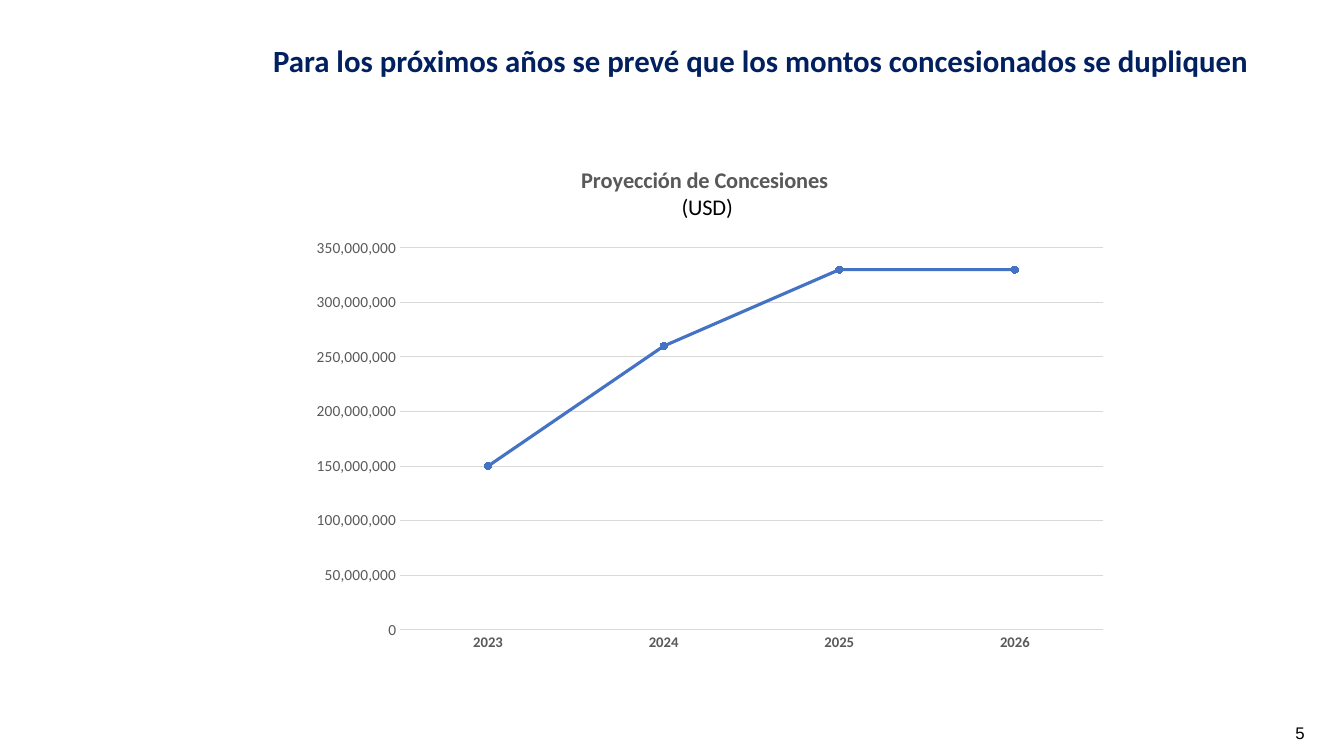
"""Build the slide on projected concessions, with its line chart."""
from dataclasses import dataclass

from lxml import etree
from pptx import Presentation
from pptx import util as u
from pptx.chart.data import CategoryChartData
from pptx.dml.color import RGBColor
from pptx.enum import chart as ch, text
from pptx.oxml import ns


@dataclass(frozen=True)
class TextStyle:
    size: float
    color: str
    bold: bool = False
    face: str = "Calibri"


@dataclass(frozen=True)
class Theme:
    headline: TextStyle = TextStyle(22, "002060", True)
    chart_title: TextStyle = TextStyle(16, "595959", True)
    chart_unit: TextStyle = TextStyle(16, "000000")
    years: TextStyle = TextStyle(10.5, "595959", True)
    amounts: TextStyle = TextStyle(11, "595959")
    page_number: TextStyle = TextStyle(12, "000000", face="Arial")
    series: str = "4472C4"
    grid: str = "D9D9D9"


@dataclass(frozen=True)
class Box:
    left: float
    top: float
    width: float
    height: float

    def emu(self) -> tuple:
        return tuple(map(u.Inches, (self.left, self.top, self.width, self.height)))


THEME = Theme()
PROJECTION = {"2023": 150_000_000, "2024": 260_000_000,
              "2025": 330_000_000, "2026": 330_000_000}
CHART = Box(2.97, 1.46, 8.13, 5.1)
PLOT = Box(3.97, 2.46, 6.97, 3.79)


def style_font(font, style: TextStyle) -> None:
    font.name = style.face
    font.size = u.Pt(style.size)
    font.bold = style.bold
    font.color.rgb = RGBColor.from_string(style.color)


def style_line(line, color: str, width: float) -> None:
    line.color.rgb = RGBColor.from_string(color)
    line.width = u.Pt(width)


def place_in_chart(element, index: int, **fractions: float) -> None:
    for old in element.findall(ns.qn("c:layout")):
        element.remove(old)
    layout = etree.Element(ns.qn("c:layout"))
    manual = etree.SubElement(layout, ns.qn("c:manualLayout"))
    modes = {"xMode": "edge", "yMode": "edge"}
    if "w" in fractions:
        modes = {"layoutTarget": "inner", **modes}
    for tag, value in {**modes, **fractions}.items():
        etree.SubElement(manual, ns.qn(f"c:{tag}")).set("val", str(value))
    element.insert(index, layout)


def add_headline(slide) -> None:
    headline = slide.shapes.title
    headline.left, headline.top, headline.width, headline.height = Box(2.68, 0.38, 10.65, 0.43).emu()
    frame = headline.text_frame
    frame.margin_left = frame.margin_right = u.Inches(0.03)
    frame.margin_top = frame.margin_bottom = u.Inches(0.03)
    frame.vertical_anchor = text.MSO_ANCHOR.TOP
    frame.auto_size = text.MSO_AUTO_SIZE.SHAPE_TO_FIT_TEXT
    frame.text = "Para los próximos años se prevé que los montos concesionados se dupliquen"
    frame.paragraphs[0].alignment = text.PP_ALIGN.LEFT
    style_font(frame.paragraphs[0].font, THEME.headline)


def add_page_number(slide) -> None:
    frame = slide.shapes.add_textbox(*Box(12.64, 7.12, 0.51, 0.21).emu()).text_frame
    frame.word_wrap = True
    frame.text = "5"
    frame.paragraphs[0].alignment = text.PP_ALIGN.CENTER
    style_font(frame.paragraphs[0].font, THEME.page_number)


def title_chart(chart) -> None:
    chart.has_title = True
    frame = chart.chart_title.text_frame
    frame.text = "Proyección de Concesiones "
    frame.add_paragraph().text = "(USD)"
    for paragraph, style in zip(frame.paragraphs, (THEME.chart_title, THEME.chart_unit)):
        style_font(paragraph.font, style)
    place_in_chart(chart.chart_title.element, 1, x=0.34, y=0.03)


def format_axes(chart) -> None:
    years, amounts = chart.category_axis, chart.value_axis
    for axis, style in ((years, THEME.years), (amounts, THEME.amounts)):
        axis.major_tick_mark = axis.minor_tick_mark = ch.XL_TICK_MARK.NONE
        style_font(axis.tick_labels.font, style)
    style_line(years.format.line, THEME.grid, 0.75)
    amounts.format.line.fill.background()
    amounts.minimum_scale, amounts.maximum_scale = 0, 350_000_000
    amounts.major_unit = 50_000_000
    amounts.tick_labels.number_format = "#,##0"
    amounts.tick_labels.number_format_is_linked = False
    style_line(amounts.major_gridlines.format.line, THEME.grid, 0.75)


def add_projection(slide) -> None:
    data = CategoryChartData(number_format="#,##0")
    data.categories = list(PROJECTION)
    data.add_series("Series 1", list(PROJECTION.values()))
    chart = slide.shapes.add_chart(ch.XL_CHART_TYPE.LINE_MARKERS, *CHART.emu(), data).chart
    chart.has_legend = False
    chart.font.name = "Calibri"
    chart.font.size = u.Pt(10)
    title_chart(chart)
    format_axes(chart)
    chart.plots[0].vary_by_categories = False
    concessions = chart.plots[0].series[0]
    concessions.smooth = False
    style_line(concessions.format.line, THEME.series, 2.25)
    marker = concessions.marker
    marker.style, marker.size = ch.XL_MARKER_STYLE.CIRCLE, 5
    marker.format.fill.solid()
    marker.format.fill.fore_color.rgb = RGBColor.from_string(THEME.series)
    style_line(marker.format.line, THEME.series, 0.75)
    place_in_chart(chart.element.find(".//" + ns.qn("c:plotArea")), 0,
                   x=round((PLOT.left - CHART.left) / CHART.width, 3),
                   y=round((PLOT.top - CHART.top) / CHART.height, 3),
                   w=round(PLOT.width / CHART.width, 3),
                   h=round(PLOT.height / CHART.height, 3))


def main() -> None:
    deck = Presentation()
    deck.slide_width, deck.slide_height = u.Inches(13.33), u.Inches(7.5)
    slide = deck.slides.add_slide(deck.slide_layouts.get_by_name("Title Only"))
    add_page_number(slide)
    add_headline(slide)
    add_projection(slide)
    deck.save("out.pptx")


if __name__ == "__main__":
    main()
